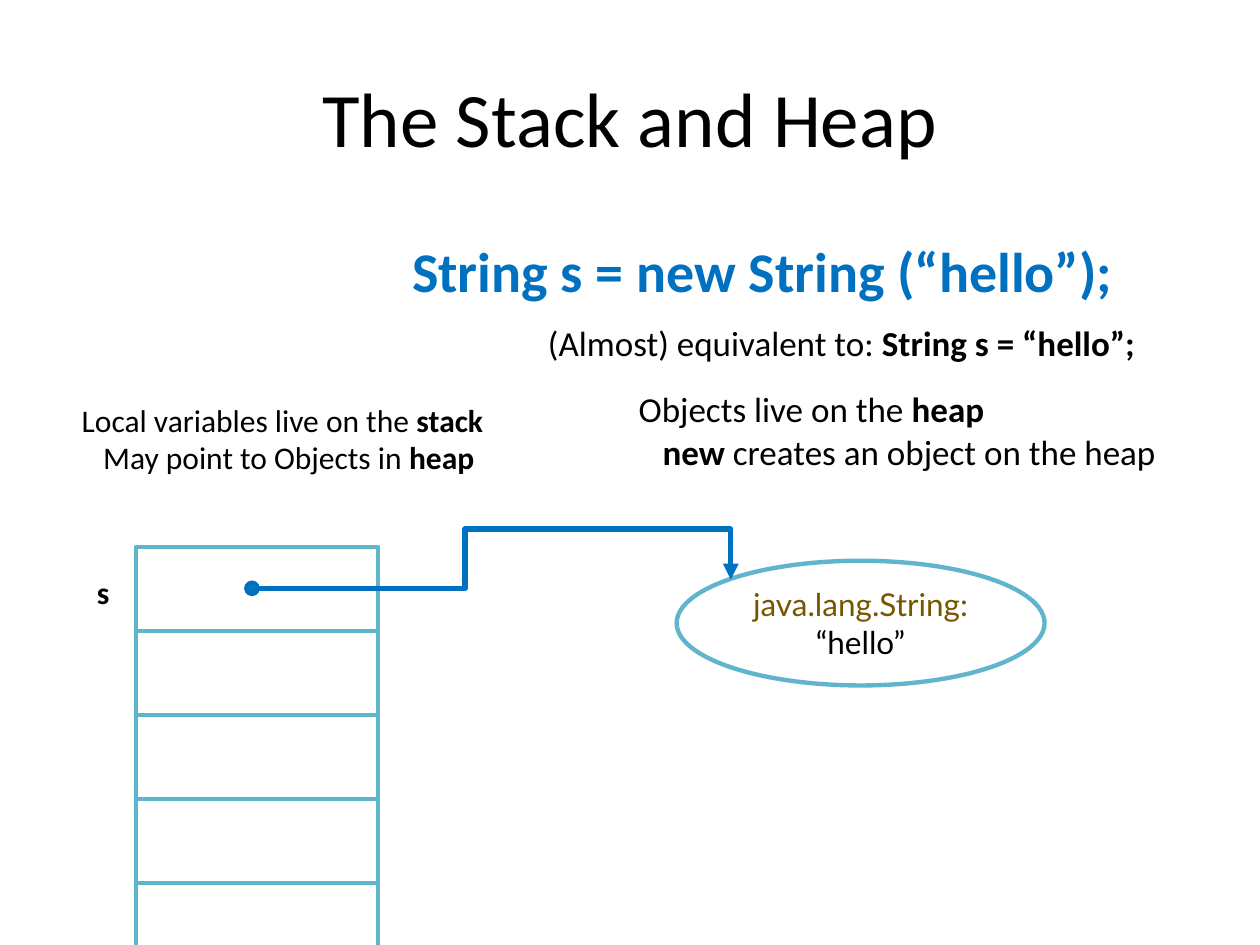
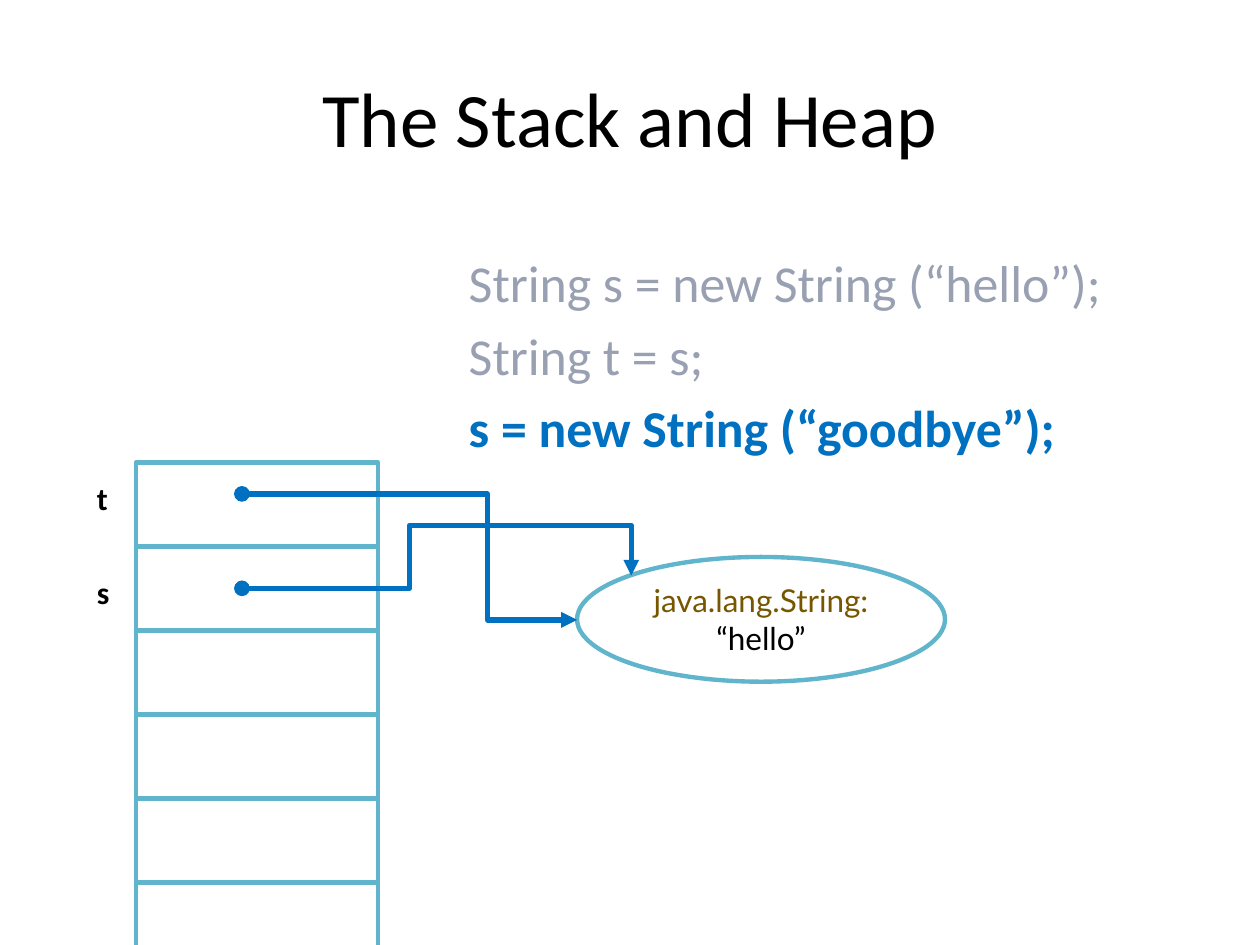
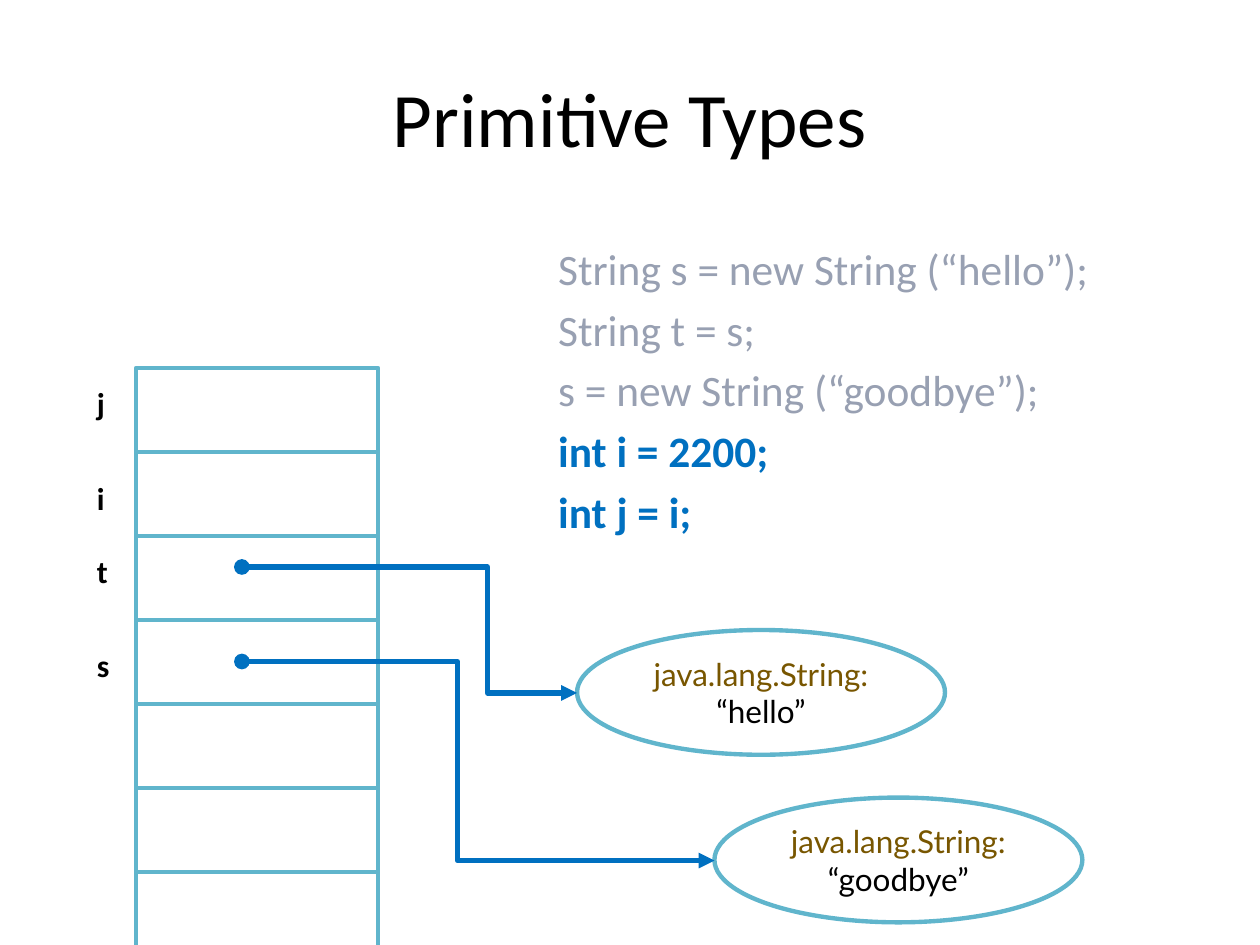
from dataclasses import dataclass

from lxml import etree
from pptx import Presentation
from pptx.dml.color import RGBColor
from pptx.enum.shapes import MSO_CONNECTOR, MSO_SHAPE
from pptx.enum.text import MSO_ANCHOR, MSO_AUTO_SIZE, PP_ALIGN
from pptx.oxml.ns import qn
from pptx.util import Inches, Pt

SLIDE_WIDTH, SLIDE_HEIGHT = 10, 7.5
STACK_LEFT, STACK_WIDTH, ROW_HEIGHT = 1.08, 1.92, 2 / 3
OBJECT_WIDTH, OBJECT_HEIGHT = 2.92, 0.99


@dataclass(frozen=True)
class Theme:
    font: str = "Calibri"
    object_font: str = "Lato"
    text: str = "000000"
    done: str = "98A0B2"
    accent: str = "0070C0"
    outline: str = "60B5CC"
    type_name: str = "785600"
    title_size: float = 44
    note_size: float = 20
    label_size: float = 18
    outline_width: float = 2.5
    arrow_width: float = 3


def box(left, top, width, height):
    return [Inches(value) for value in (left, top, width, height)]


class MemoryDeck:
    """Holds the theme and the slide that is being drawn."""

    def __init__(self, theme):
        self.theme = theme
        self.deck = Presentation()
        self.deck.slide_width = Inches(SLIDE_WIDTH)
        self.deck.slide_height = Inches(SLIDE_HEIGHT)
        self.slide = None

    def format(self, paragraph, size, color=None, bold=False, name=None):
        font = paragraph.font
        font.name = name or self.theme.font
        font.size = Pt(size)
        font.bold = bold
        font.color.rgb = RGBColor.from_string(color or self.theme.text)

    def start(self, title):
        self.slide = self.deck.slides.add_slide(self.deck.slide_layouts[1])
        heading = self.slide.shapes.title
        heading.left, heading.top, heading.width, heading.height = box(0.5, 0.3, 9, 1.25)
        heading.text_frame.text = title
        heading.text_frame.vertical_anchor = MSO_ANCHOR.MIDDLE
        paragraph = heading.text_frame.paragraphs[0]
        paragraph.alignment = PP_ALIGN.CENTER
        self.format(paragraph, self.theme.title_size)

    def code(self, area, size, done, current):
        """Statements already run in grey, then the current ones in bold."""
        body = self.slide.placeholders[1]
        body.left, body.top, body.width, body.height = box(*area)
        frame = body.text_frame
        frame.text = "\n".join(done + current)
        frame.auto_size = MSO_AUTO_SIZE.NONE
        for index, paragraph in enumerate(frame.paragraphs):
            is_current = index >= len(done)
            self.format(paragraph, size,
                        self.theme.accent if is_current else self.theme.done, is_current)
            properties = paragraph._p.get_or_add_pPr()
            properties.set("marL", str(Inches(0.38)))
            properties.set("indent", str(Inches(-0.38)))
            properties.insert(0, etree.Element(qn("a:buNone")))

    def note(self, area, size, lines, indent=0, wrap=False):
        """Lines of (text, bold) runs; lines after the first are indented."""
        frame = self.slide.shapes.add_textbox(*box(*area)).text_frame
        frame.word_wrap = wrap
        frame.auto_size = MSO_AUTO_SIZE.SHAPE_TO_FIT_TEXT
        for index, runs in enumerate(lines):
            paragraph = frame.add_paragraph() if index else frame.paragraphs[0]
            all_bold = all(bold for _, bold in runs)
            self.format(paragraph, size, bold=all_bold)
            for text, bold in runs:
                run = paragraph.add_run()
                run.text = text
                if bold != all_bold:
                    run.font.bold = bold
            if index and indent:
                paragraph._p.get_or_add_pPr().set("marL", str(Inches(indent)))

    def variable(self, name, top, width=0.3):
        self.note((0.67, top, width, 0.4), self.theme.label_size, [[(name, True)]])

    def outlined(self, kind, area):
        shape = self.slide.shapes.add_shape(kind, *box(*area))
        shape.shadow.inherit = False
        shape.fill.background()
        shape.line.color.rgb = RGBColor.from_string(self.theme.outline)
        shape.line.width = Pt(self.theme.outline_width)
        return shape

    def connector(self, kind, start, end, color, width):
        line = self.slide.shapes.add_connector(
            kind, *[Inches(value) for value in (*start, *end)])
        line.line.color.rgb = RGBColor.from_string(color)
        line.line.width = Pt(width)
        etree.SubElement(line._element.spPr, qn("a:effectLst"))
        return line

    def stack(self, top, bottom):
        self.outlined(MSO_SHAPE.RECTANGLE, (STACK_LEFT, top, STACK_WIDTH, bottom - top))
        row = top
        while row < SLIDE_HEIGHT:
            self.connector(MSO_CONNECTOR.STRAIGHT, (STACK_LEFT, row),
                           (STACK_LEFT + STACK_WIDTH, row),
                           self.theme.outline, self.theme.outline_width)
            row += ROW_HEIGHT

    def heap_object(self, left, top, value):
        ellipse = self.outlined(MSO_SHAPE.OVAL, (left, top, OBJECT_WIDTH, OBJECT_HEIGHT))
        frame = ellipse.text_frame
        frame.text = f"java.lang.String:\n{value}"
        frame.vertical_anchor = MSO_ANCHOR.MIDDLE
        frame.auto_size = MSO_AUTO_SIZE.SHAPE_TO_FIT_TEXT
        for paragraph, color in zip(frame.paragraphs, (self.theme.type_name, self.theme.text)):
            paragraph.alignment = PP_ALIGN.CENTER
            self.format(paragraph, self.theme.label_size, color, name=self.theme.object_font)

    def pointer(self, start, end, turn_x, over_y=None):
        """Elbow arrow turning at turn_x; with over_y it enters from above."""
        arrow = self.connector(MSO_CONNECTOR.ELBOW, start, end,
                               self.theme.accent, self.theme.arrow_width)
        bends = [(turn_x - start[0]) / (end[0] - start[0])]
        if over_y is not None:
            bends.append((over_y - start[1]) / (end[1] - start[1]))
        geometry = arrow._element.spPr.find(qn("a:prstGeom"))
        geometry.set("prst", f"bentConnector{len(bends) + 2}")
        adjustments = geometry.find(qn("a:avLst"))
        for number, bend in enumerate(bends, 1):
            etree.SubElement(adjustments, qn("a:gd"), name=f"adj{number}",
                             fmla=f"val {round(bend * 100000)}")
        outline = arrow.line._get_or_add_ln()
        etree.SubElement(outline, qn("a:headEnd"), type="oval")
        etree.SubElement(outline, qn("a:tailEnd"), type="triangle")


def main():
    theme = Theme()
    memory = MemoryDeck(theme)
    new_hello = "String s = new String (“hello”);"
    copy_s = "String t = s;"
    new_goodbye = "s = new String (“goodbye”);"

    # A variable on the stack points to an object on the heap
    memory.start("The Stack and Heap")
    memory.code((3.17, 1.83, 6.42, 0.83), 32, [], [new_hello])
    memory.note((4.97, 3.03, 4.44, 1.11), theme.note_size,
                [[("Objects live on the ", False), ("heap", True)],
                 [("new", True), (" creates an object on the heap", False)]], indent=0.19)
    memory.note((4.25, 2.5, 4.91, 0.44), theme.note_size,
                [[("(Almost) equivalent to: ", False), ("String s = “hello”;", True)]])
    memory.stack(4.34, 7.59)
    memory.variable("s", 4.5)
    memory.heap_object(5.37, 4.45, "“hello”")
    memory.pointer((2, 4.67), (5.8, 4.6), 3.69, over_y=4.2)
    memory.note((0.55, 3.13, 3.61, 0.71), theme.label_size,
                [[("Local variables live on the ", False), ("stack", True)],
                 [("May point to Objects in ", False), ("heap", True)]],
                indent=0.17, wrap=True)

    # Two variables share one object
    memory.start("The Stack and Heap")
    memory.code((3.62, 1.94, 6.45, 1.61), 29.6, [new_hello, copy_s], [new_goodbye])
    memory.stack(3.67, 7.59)
    memory.variable("s", 4.5)
    memory.heap_object(4.58, 4.42, "“hello”")
    memory.pointer((1.92, 4.67), (5.01, 4.57), 3.25, over_y=4.17)
    memory.variable("t", 3.75)
    memory.pointer((1.92, 3.92), (4.58, 4.92), 3.87)

    # Primitive variables join the stack
    memory.start("Primitive Types")
    memory.code((4.33, 1.87, 5, 2.19), 24.8, [new_hello, copy_s, new_goodbye],
                ["int i = 2200;", "int j = i;"])
    memory.stack(2.92, 7.92)
    for name, top in (("s", 5.08), ("t", 4.33), ("i", 3.75), ("j", 3)):
        memory.variable(name, top)
    memory.heap_object(4.58, 5, "“hello”")
    memory.heap_object(5.67, 6.33, "“goodbye”")
    memory.pointer((1.92, 5.25), (5.67, 6.83), 3.63)
    memory.pointer((1.92, 4.5), (4.58, 5.5), 3.87)

    memory.deck.save("out.pptx")


if __name__ == "__main__":
    main()
